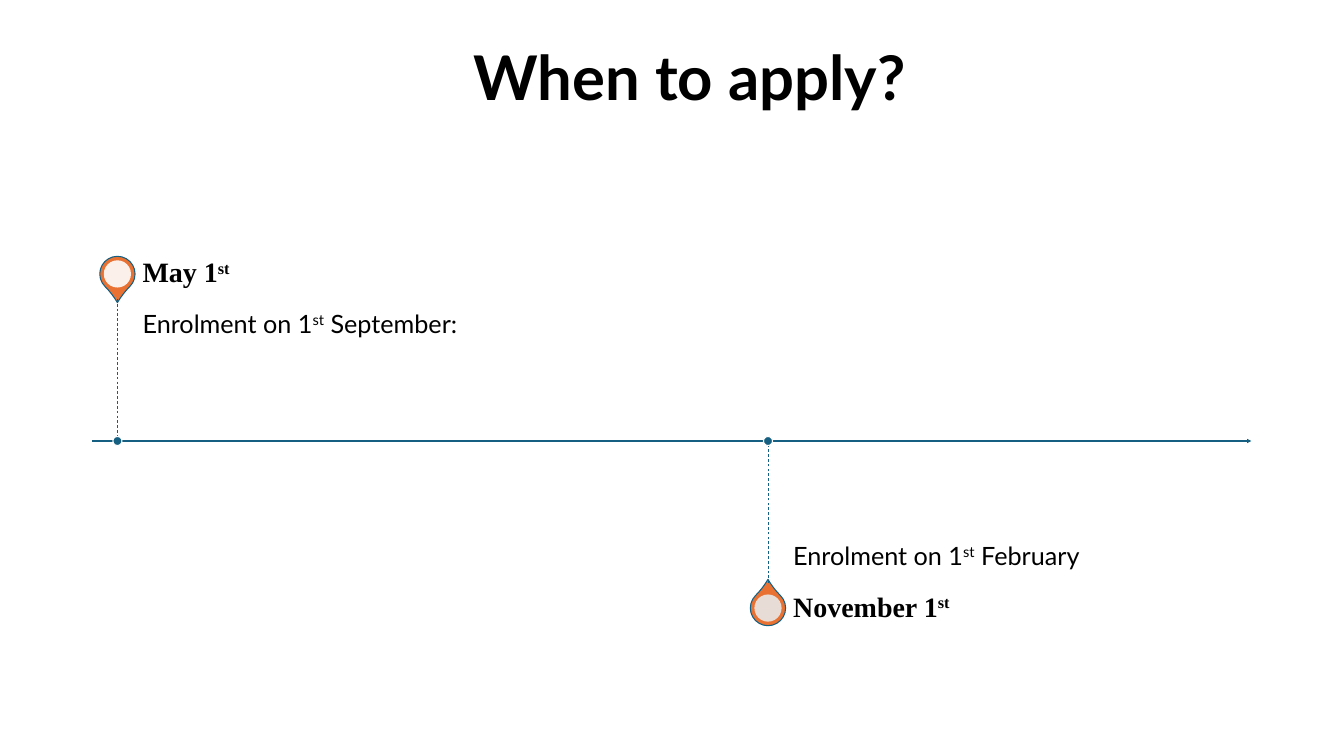
from pptx import Presentation
from pptx import util as u
from pptx.dml.color import RGBColor
from pptx.enum import dml, shapes, text
from pptx.oxml.ns import qn
from lxml import etree

W, H = 26.67, 15
COLS = 46  # timeline grid columns
BLUE, ORANGE = "156082", "E97132"


def color(value):
    return RGBColor.from_string(value)


def inches(*lengths):
    return [u.Inches(v) for v in lengths]


def write(s, parts, font="Lato", size=36, bold=False, anchor="TOP", insets=(0, 0, 0, 0)):
    """Fill a shape with one paragraph; every second part is superscript."""
    tf = s.text_frame
    tf.word_wrap = True
    tf.auto_size = text.MSO_AUTO_SIZE.NONE
    tf.vertical_anchor = text.MSO_ANCHOR[anchor]
    tf.margin_left, tf.margin_top, tf.margin_right, tf.margin_bottom = inches(*insets)
    p = tf.paragraphs[0]
    p.alignment = text.PP_ALIGN.LEFT
    p.line_spacing = 0.9
    for i, part in enumerate(parts):
        r = p.add_run()
        r.text = part
        r.font.name, r.font.size, r.font.bold = font, u.Pt(size), bold
        r.font.color.rgb = color("000000")
        if i % 2:
            r.font._element.set("baseline", "30000")


def add_line(slide, x1, y1, x2, y2, width, dashed=False, arrow=False):
    s = slide.shapes.add_connector(shapes.MSO_CONNECTOR.STRAIGHT, *inches(x1, y1, x2, y2))
    s.line.color.rgb = color(BLUE)
    s.line.width = u.Pt(width)
    if dashed:
        s.line.dash_style = dml.MSO_LINE.DASH
    if arrow:
        etree.SubElement(s.line._get_or_add_ln(), qn("a:tailEnd"), type="triangle")
    etree.SubElement(s._element.spPr, qn("a:effectLst"))


def add_round(slide, kind, cx, cy, size, fill, outline=None, alpha=None):
    """Add a shape of equal width and height around a centre."""
    s = slide.shapes.add_shape(
        shapes.MSO_SHAPE[kind], *inches(cx - size / 2, cy - size / 2, size, size))
    s.shadow.inherit = False
    s.fill.solid()
    s.fill.fore_color.rgb = color(fill)
    if alpha:
        srgb = s._element.spPr.find(qn("a:solidFill"))[0]
        etree.SubElement(srgb, qn("a:alpha"), val=str(alpha * 1000))
    if outline:
        s.line.color.rgb = color(outline)
        s.line.width = u.Pt(1.5)
    else:
        s.line.fill.background()
    return s


def add_title(slide, x, y, w, h):
    s = slide.shapes.title
    s.left, s.top, s.width, s.height = inches(x, y, w, h)
    write(s, ["When to apply?"], size=88, bold=True, insets=(0.1, 0.13, 0.1, 0.05))


def add_milestone(slide, x, axis, reach, col, date, note, above, hole):
    """Place pin, texts, stem and dot on one side of the axis."""
    side = -1 if above else 1
    date_h = 0.26 * reach
    stem = reach - date_h
    stem_end = axis + side * stem
    pin_y = stem_end + side * date_h / 2
    left, width = x + col, 16.74 * col

    pin = add_round(slide, "TEAR", x, pin_y, 1.4 * col, ORANGE, BLUE)
    pin.adjustments[0] = 1.15
    pin.rotation = 135 if above else 315
    add_round(slide, "OVAL", x, pin_y, 1.08 * col, hole, alpha=90)

    s = slide.shapes.add_textbox(*inches(left, min(axis, stem_end), width, stem))
    write(s, note, anchor="TOP" if above else "BOTTOM",
          insets=(0, 0.25, 0, 0.38) if above else (0, 0.38, 0.25, 0.25))
    s = slide.shapes.add_textbox(*inches(left, pin_y - date_h / 2, width, date_h))
    write(s, date, font="Times New Roman", size=40, bold=True, anchor="MIDDLE",
          insets=(0, 0, 0.28, 0))

    add_line(slide, x, stem_end, x, axis, 1, dashed=True)
    add_round(slide, "OVAL", x, axis, 0.36 * col, BLUE, "FFFFFF")


def add_timeline(slide, x, y, w, h):
    col, axis = w / COLS, y + h / 2
    add_line(slide, x, axis, x + w, axis, 1.5, arrow=True)
    milestones = [
        (1, ["May 1", "st"], ["Enrolment on 1", "st", " September:\u00a0"], True, "FFFFFF"),
        (26.82, ["November 1", "st"], ["Enrolment on 1", "st", " February"], False, "E8E8E8"),
    ]
    for column, *details in milestones:
        add_milestone(slide, x + column * col, axis, h / 2, col, *details)


def main():
    prs = Presentation()
    prs.slide_width, prs.slide_height = inches(W, H)
    slide = prs.slides.add_slide(prs.slide_layouts[5])
    add_title(slide, 9.3, 0.8, 15.54, 2.9)
    add_timeline(slide, 1.83, 4.94, 23, 7.62)
    prs.save("out.pptx")


if __name__ == "__main__":
    main()
